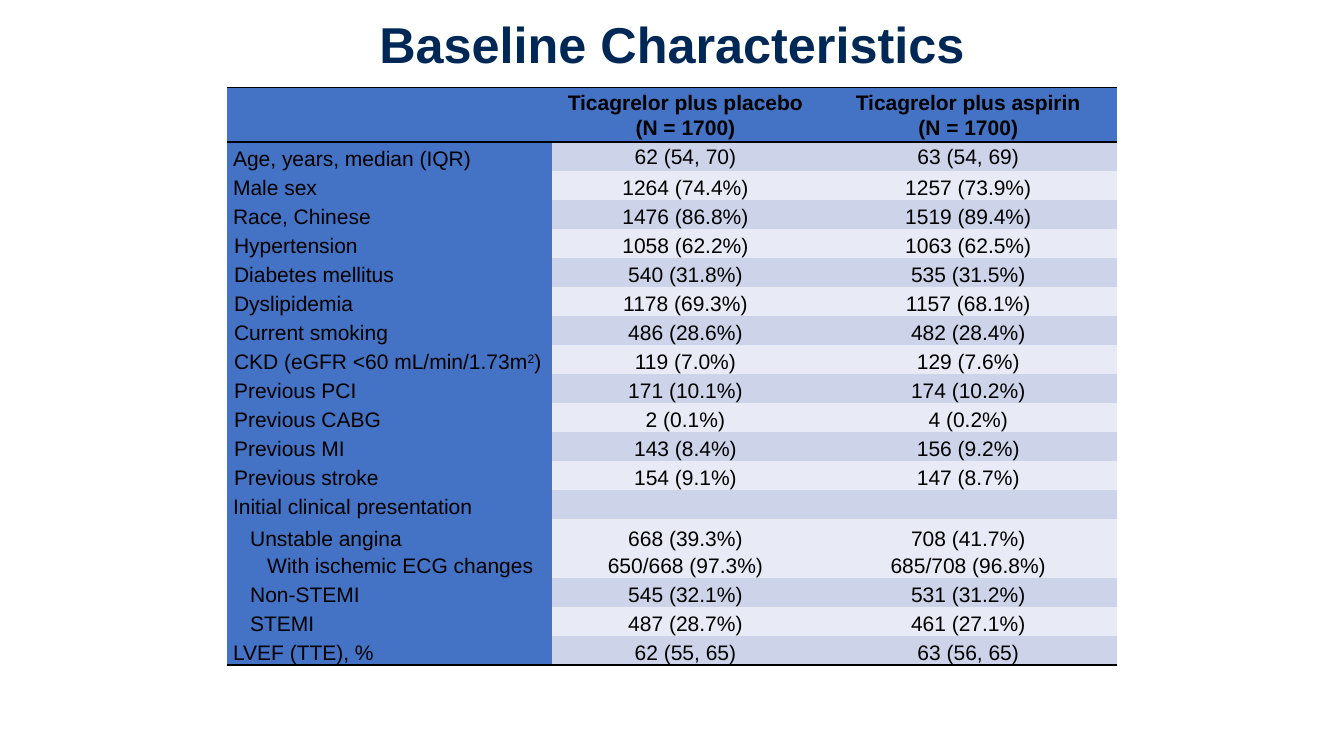
"""Build the baseline characteristics slide."""
from dataclasses import dataclass
from typing import NamedTuple

from lxml.etree import SubElement
from pptx import Presentation
from pptx.dml.color import RGBColor
from pptx.enum.text import MSO_ANCHOR, PP_ALIGN
from pptx.oxml.ns import qn
from pptx.util import Pt


@dataclass(frozen=True)
class Theme:
    font: str = "Arial"
    title: str = "002856"
    text: str = "000000"
    rule: str = "000000"
    head: str = "4472C4"
    bands: tuple[str, str] = ("CDD4EA", "E8EBF5")
    title_size: float = 36
    table_size: float = 15


class Line(NamedTuple):
    text: str
    indent: float = 0
    sup: str = ""
    tail: str = ""


class Row(NamedTuple):
    labels: list[Line]
    placebo: list[str]
    aspirin: list[str]
    height: float = 20.28


T = Theme()
NUDGE, STEP = 0.7, 12.2
COLS = (232, 190.8, 213.2)
ROWS = [
    Row([], ["Ticagrelor plus placebo", "(N = 1700)"],
        ["Ticagrelor plus aspirin", "(N = 1700)"], 39),
    Row([Line("Age, years, median (IQR)")], ["62 (54, 70)"], ["63 (54, 69)"]),
    Row([Line("Male sex")], ["1264 (74.4%)"], ["1257 (73.9%)"]),
    Row([Line("Race, Chinese")], ["1476 (86.8%)"], ["1519 (89.4%)"]),
    Row([Line("Hypertension", NUDGE)], ["1058 (62.2%)"], ["1063 (62.5%)"]),
    Row([Line("Diabetes mellitus", NUDGE)], ["540 (31.8%)"], ["535 (31.5%)"]),
    Row([Line("Dyslipidemia", NUDGE)], ["1178 (69.3%)"], ["1157 (68.1%)"]),
    Row([Line("Current smoking", NUDGE)], ["486 (28.6%)"], ["482 (28.4%)"]),
    Row([Line("CKD (eGFR <60 mL/min/1.73m", NUDGE, "2", ")")], ["119 (7.0%)"], ["129 (7.6%)"]),
    Row([Line("Previous PCI", NUDGE)], ["171 (10.1%)"], ["174 (10.2%)"]),
    Row([Line("Previous CABG", NUDGE)], ["2 (0.1%)"], ["4 (0.2%)"]),
    Row([Line("Previous MI", NUDGE)], ["143 (8.4%)"], ["156 (9.2%)"]),
    Row([Line("Previous stroke", NUDGE)], ["154 (9.1%)"], ["147 (8.7%)"]),
    Row([Line("Initial clinical presentation")], [], []),
    Row([Line("Unstable angina", STEP), Line("With ischemic ECG changes", 2 * STEP)],
        ["668 (39.3%)", "650/668 (97.3%)"], ["708 (41.7%)", "685/708 (96.8%)"], 42),
    Row([Line("Non-STEMI", STEP)], ["545 (32.1%)"], ["531 (31.2%)"]),
    Row([Line("STEMI", STEP)], ["487 (28.7%)"], ["461 (27.1%)"]),
    Row([Line("LVEF (TTE), %")], ["62 (55, 65)"], ["63 (56, 65)"]),
]


def add_run(p, text: str, size: float, color: str, bold: bool, sup: bool = False) -> None:
    """Add one styled run to a paragraph."""
    r = p.add_run()
    r.text = text
    r.font.name, r.font.size, r.font.bold = T.font, Pt(size), bold
    r.font.color.rgb = RGBColor.from_string(color)
    if sup:
        r.font._element.set("baseline", "30000")


def add_lines(tf, lines: list[Line], align: PP_ALIGN, spacing: float, bold: bool) -> None:
    """Write one paragraph per line into a table cell."""
    for i, line in enumerate(lines):
        p = tf.add_paragraph() if i else tf.paragraphs[0]
        p.alignment, p.line_spacing = align, spacing
        if line.indent:
            p._p.get_or_add_pPr().set("indent", str(Pt(line.indent)))
        for text, sup in ((line.text, False), (line.sup, True), (line.tail, False)):
            if text:
                add_run(p, text, T.table_size, T.text, bold, sup)
    if not lines:
        SubElement(tf.paragraphs[0]._p, qn("a:endParaRPr"), sz=str(int(T.table_size * 100)))


def set_borders(cell, ruled: set[str]) -> None:
    """Draw the ruled sides of a cell and clear the others."""
    tcPr = cell._tc.get_or_add_tcPr()
    for side in "LRTB":
        ln = SubElement(tcPr, qn(f"a:ln{side}"), w=str(Pt(1)))
        if side in ruled:
            SubElement(SubElement(ln, qn("a:solidFill")), qn("a:srgbClr"), val=T.rule)
        else:
            SubElement(ln, qn("a:noFill"))


def add_title(s, text: str) -> None:
    """Add the centred slide title."""
    tf = s.shapes.add_textbox(Pt(0), Pt(7.2), Pt(960), Pt(53.3)).text_frame
    tf.word_wrap, tf.vertical_anchor = True, MSO_ANCHOR.MIDDLE
    p = tf.paragraphs[0]
    p.alignment, p.line_spacing = PP_ALIGN.CENTER, 0.9
    add_run(p, text, T.title_size, T.title, True)


def add_characteristics(s, rows: list[Row]) -> None:
    """Add the table of characteristics by treatment group."""
    height = sum(row.height for row in rows)
    table = s.shapes.add_table(len(rows), len(COLS), Pt(162.2), Pt(62.5),
                               Pt(sum(COLS)), Pt(height)).table
    table.first_row = table.horz_banding = False
    for col, width in zip(table.columns, COLS):
        col.width = Pt(width)
    for i, row in enumerate(rows):
        table.rows[i].height = Pt(row.height)
        head = i == 0
        ruled = {0: {"T", "B"}, 1: {"T"}, len(rows) - 1: {"B"}}.get(i, set())
        values = [[Line(text) for text in group] for group in (row.placebo, row.aspirin)]
        for j, lines in enumerate([row.labels, *values]):
            cell = table.cell(i, j)
            cell.margin_left = cell.margin_right = Pt(4.3)
            cell.margin_top = cell.margin_bottom = Pt(0)
            cell.vertical_anchor = MSO_ANCHOR.MIDDLE if head else MSO_ANCHOR.BOTTOM
            if i == 1 and j:
                cell.vertical_anchor = MSO_ANCHOR.TOP
            set_borders(cell, ruled)
            cell.fill.solid()
            fill = T.head if head or j == 0 else T.bands[(i - 1) % 2]
            cell.fill.fore_color.rgb = RGBColor.from_string(fill)
            align = PP_ALIGN.CENTER if j else PP_ALIGN.LEFT
            add_lines(cell.text_frame, lines, align, 1.07 if head else 1.15, head)


def main() -> None:
    """Create and save the presentation."""
    prs = Presentation()
    prs.slide_width, prs.slide_height = Pt(960), Pt(540)
    s = prs.slides.add_slide(prs.slide_layouts[6])
    add_title(s, "Baseline Characteristics")
    add_characteristics(s, ROWS)
    prs.save("out.pptx")


if __name__ == "__main__":
    main()
